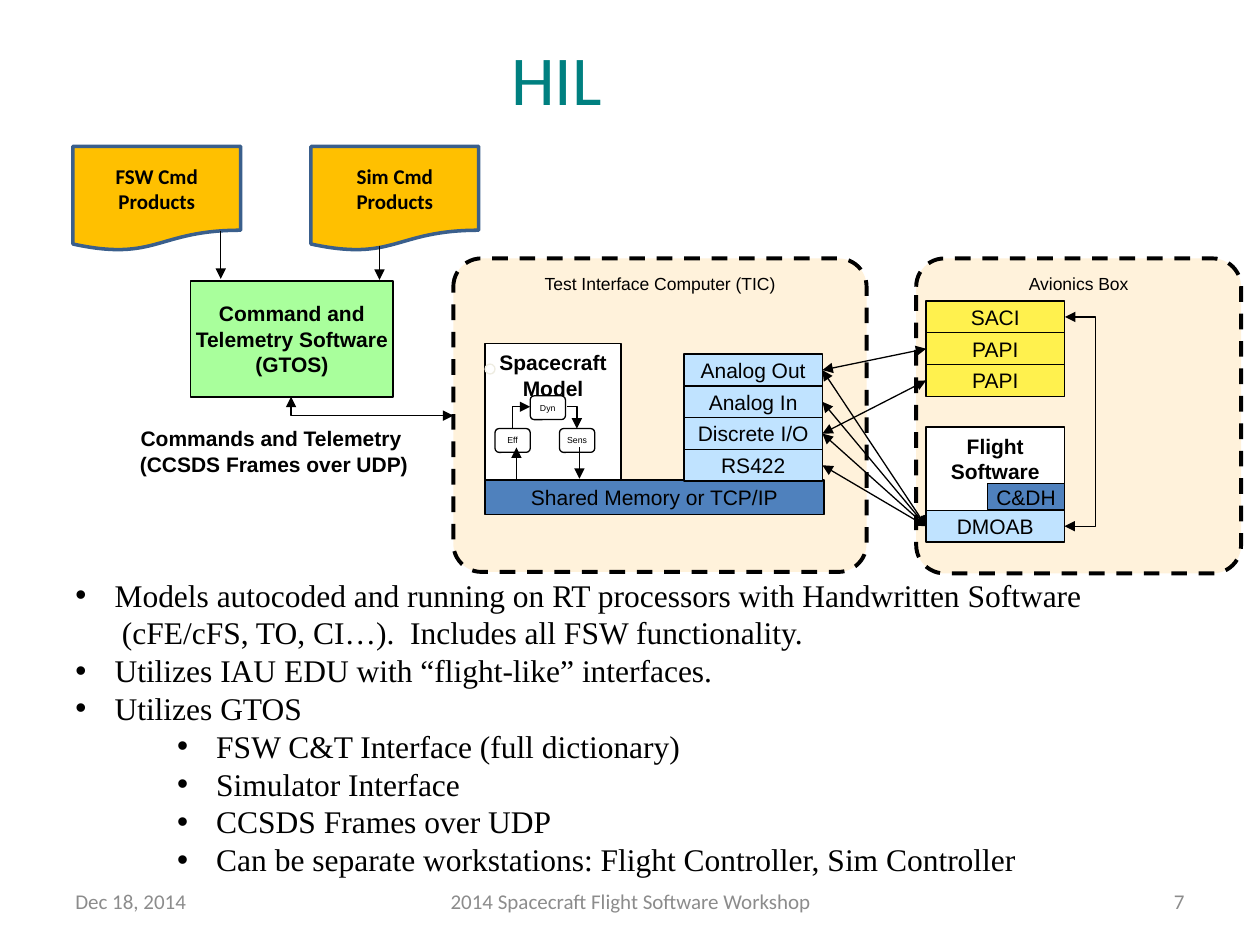
from lxml.etree import SubElement
from pptx import Presentation
from pptx.dml.color import RGBColor
from pptx.enum.dml import MSO_LINE
from pptx.enum.shapes import MSO_CONNECTOR, MSO_SHAPE
from pptx.enum.text import MSO_ANCHOR, PP_ALIGN
from pptx.oxml.ns import qn
from pptx.util import Cm, Pt

BLACK, WHITE, BLUE, SKY = "000000", "FFFFFF", "4F81BD", "C0E3FF"
YELLOW, CREAM, GREY = "FFF14E", "FFF2DB", "8C8C8C"


def color(hex_code):
    return RGBColor.from_string(hex_code)


class Diagram:
    """Slide under construction, with the style shared by its elements."""

    font, size, thin = "Arial", 12, 0.75

    def __init__(self, slide):
        self.slide = slide

    def set_text(self, frame, text, align=PP_ALIGN.CENTER, anchor=MSO_ANCHOR.MIDDLE,
                 wrap=False, font=None, size=None, ink=BLACK, bold=False):
        frame.text = text
        frame.word_wrap = wrap
        frame.vertical_anchor = anchor
        for paragraph in frame.paragraphs:
            paragraph.alignment = align
            for run in paragraph.runs:
                run.font.name = font or self.font
                run.font.size = Pt(size or self.size)
                run.font.bold = bold
                run.font.color.rgb = color(ink)

    def title(self, text, left, top, width, height, **style):
        heading = self.slide.shapes.title
        heading.left, heading.top = Cm(left), Cm(top)
        heading.width, heading.height = Cm(width), Cm(height)
        self.set_text(heading.text_frame, text, **style)

    def label(self, text, left, top, width, height, **style):
        area = self.slide.shapes.add_textbox(Cm(left), Cm(top), Cm(width), Cm(height))
        self.set_text(area.text_frame, text, wrap=True, **style)
        return area.text_frame

    def bullets(self, items, left, top, width, height, **style):
        """Items are (text, left margin in cm, has a bullet)."""
        frame = self.label("\n".join(item[0] for item in items), left, top, width,
                           height, align=PP_ALIGN.LEFT, anchor=MSO_ANCHOR.TOP, **style)
        for paragraph, (_, margin, marked) in zip(frame.paragraphs, items):
            properties = paragraph._p.get_or_add_pPr()
            properties.set("marL", str(Cm(margin)))
            if marked:
                properties.set("indent", str(Cm(-0.79)))
                SubElement(properties, qn("a:buFont"), typeface="Arial")
                SubElement(properties, qn("a:buChar"), char="•")

    def box(self, text, left, top, width, height, fill=WHITE, kind=MSO_SHAPE.RECTANGLE,
            edge=BLACK, weight=None, corner=None, dash=None, **style):
        shape = self.slide.shapes.add_shape(kind, Cm(left), Cm(top), Cm(width), Cm(height))
        shape.shadow.inherit = False
        if fill:
            shape.fill.solid()
            shape.fill.fore_color.rgb = color(fill)
        else:
            shape.fill.background()
        shape.line.color.rgb = color(edge)
        shape.line.width = Pt(weight or self.thin)
        if dash:
            shape.line.dash_style = dash
        if corner:
            shape.adjustments[0] = corner
        if text:
            self.set_text(shape.text_frame, text, **style)

    def stack(self, names, left, top, width, row, fill):
        for index, name in enumerate(names):
            self.box(name, left, top + index * row, width, row, fill)

    def arrow(self, start, end, head=False, tail=True, kind=MSO_CONNECTOR.STRAIGHT):
        connector = self.slide.shapes.add_connector(
            kind, Cm(start[0]), Cm(start[1]), Cm(end[0]), Cm(end[1]))
        connector.line.color.rgb = color(BLACK)
        connector.line.width = Pt(self.thin)
        properties = connector._element.spPr
        outline = properties.find(qn("a:ln"))
        for tag, shown in (("a:headEnd", head), ("a:tailEnd", tail)):
            if shown:
                SubElement(outline, qn(tag), type="triangle")
        SubElement(properties, qn("a:effectLst"))
        return properties.find(qn("a:prstGeom"))

    def corner_arrow(self, start, end, **ends):
        """One bend: leaves start sideways and reaches end vertically."""
        geometry = self.arrow(start, end, kind=MSO_CONNECTOR.ELBOW, **ends)
        geometry.set("prst", "bentConnector2")

    def bracket_arrow(self, x, start_y, end_y, reach):
        """Joins two points on one vertical by way of a line further right."""
        offset = 0.01
        geometry = self.arrow((x, start_y), (x + offset, end_y), head=True,
                              kind=MSO_CONNECTOR.ELBOW)
        guides = geometry.find(qn("a:avLst"))
        if guides is None:
            guides = SubElement(geometry, qn("a:avLst"))
        SubElement(guides, qn("a:gd"), name="adj1",
                   fmla=f"val {round(reach / offset * 100000)}")


def main():
    presentation = Presentation()
    presentation.slide_width, presentation.slide_height = Cm(25.4), Cm(19.05)
    diagram = Diagram(presentation.slides.add_slide(presentation.slide_layouts[5]))

    diagram.title("HIL", 1.27, 0.15, 19.89, 2.82, font="Calibri", size=40,
                  ink="008080", wrap=True)
    for text, left, width, align in (
            ("Dec 18, 2014", 1.27, 5.92, PP_ALIGN.LEFT),
            ("2014 Spacecraft Flight Software Workshop", 8.69, 8.05, PP_ALIGN.CENTER),
            ("7", 18.21, 5.92, PP_ALIGN.RIGHT)):
        diagram.label(text, left, 17.65, width, 1.02, align=align,
                      font="Calibri", ink=GREY)

    outer, inner = 0.79, 2.84
    diagram.bullets([
        ("Models autocoded and running on RT processors with Handwritten Software",
         outer, True),
        ("(cFE/cFS, TO, CI…).  Includes all FSW functionality.", 0.94, False),
        ("Utilizes IAU EDU with “flight-like” interfaces.", outer, True),
        ("Utilizes GTOS", outer, True),
        ("FSW C&T Interface (full dictionary)", inner, True),
        ("Simulator Interface", inner, True),
        ("CCSDS Frames over UDP", inner, True),
        ("Can be separate workstations: Flight Controller, Sim Controller", inner, True),
    ], 1.27, 11.48, 21.01, 7.19, font="Times New Roman", size=18)

    # Command products and ground software
    diagram.box("Command and\nTelemetry Software\n(GTOS)", 3.84, 5.66, 4.09, 2.34,
                "A9FF9C", weight=1, bold=True)
    for text, left in (("FSW Cmd Products", 1.47), ("Sim Cmd Products", 6.27)):
        diagram.box(text, left, 2.95, 3.38, 2.11, "FFC000",
                    MSO_SHAPE.FLOWCHART_DOCUMENT, edge="3A5F8C", weight=2,
                    font="Calibri", bold=True, wrap=True)
    diagram.arrow((4.45, 4.65), (4.45, 5.62))
    diagram.arrow((7.65, 4.95), (7.65, 5.64))

    # Computer enclosures
    for text, left, width, height in (("Avionics Box", 18.47, 6.55, 6.35),
                                      ("Test Interface Computer (TIC)", 9.14, 8.33, 6.32)):
        diagram.box(text, left, 5.21, width, height, CREAM, MSO_SHAPE.ROUNDED_RECTANGLE,
                    weight=2.25, corner=0.09, dash=MSO_LINE.DASH,
                    anchor=MSO_ANCHOR.TOP, size=10)

    # Spacecraft model loop
    diagram.box("Spacecraft\nModel", 9.78, 6.93, 2.74, 2.74,
                anchor=MSO_ANCHOR.TOP, bold=True)
    for text, left, top in (("Dyn", 10.69, 7.98), ("Eff", 9.98, 8.64), ("Sens", 11.28, 8.64)):
        diagram.box(text, left, top, 0.71, 0.48, kind=MSO_SHAPE.ROUNDED_RECTANGLE, size=5)
    diagram.corner_arrow((11.43, 8.2), (11.63, 8.64))
    # The loop closes with its arrowhead at Dyn
    diagram.corner_arrow((10.69, 8.2), (10.34, 8.64), head=True, tail=False)
    diagram.box("Shared Memory or TCP/IP", 9.78, 9.68, 6.83, 0.69, BLUE)
    diagram.arrow((10.41, 9.65), (10.41, 9.02))
    diagram.arrow((11.68, 9.02), (11.68, 9.65))

    # Flight software and interface cards
    card, row = 2.79, 0.64
    tic_left, tic_top = 13.79, 7.14
    avionics_left, avionics_top, dmoab_top = 18.67, 6.07, 10.29
    diagram.box("Flight\nSoftware", avionics_left, 8.61, card, 1.7,
                anchor=MSO_ANCHOR.TOP, bold=True)
    diagram.box("C&DH", 19.91, 9.75, 1.55, 0.53, BLUE)
    diagram.box("DMOAB", avionics_left, dmoab_top, card, row, SKY)
    diagram.stack(["Analog Out", "Analog In", "Discrete I/O", "RS422"],
                  tic_left, tic_top, card, row, SKY)
    diagram.stack(["SACI", "PAPI", "PAPI"], avionics_left, avionics_top, card, row, YELLOW)

    # Card wiring
    tic_ports = [(tic_left + card, tic_top + (i + 0.5) * row) for i in range(4)]
    saci, *papis = [(avionics_left, avionics_top + (i + 0.5) * row) for i in range(3)]
    dmoab = (avionics_left, dmoab_top + row / 2)
    diagram.bracket_arrow(avionics_left + card, dmoab[1], saci[1], 0.63)
    wires = [(port, dmoab) for port in tic_ports]
    wires += [(tic_ports[0], papis[0]), (tic_ports[2], papis[1])]
    for start, end in wires:
        diagram.arrow(start, end, head=True)

    # Ground link
    diagram.box("", 9.78, 7.34, 0.2, 0.2, None, MSO_SHAPE.OVAL, edge="EEECE1")
    diagram.corner_arrow((9.14, 8.38), (5.87, 8.0), head=True)
    diagram.label("Commands and Telemetry \n(CCSDS Frames over UDP)",
                  2.44, 8.46, 6.17, 1.3, anchor=MSO_ANCHOR.TOP, bold=True)

    presentation.save("out.pptx")


if __name__ == "__main__":
    main()
